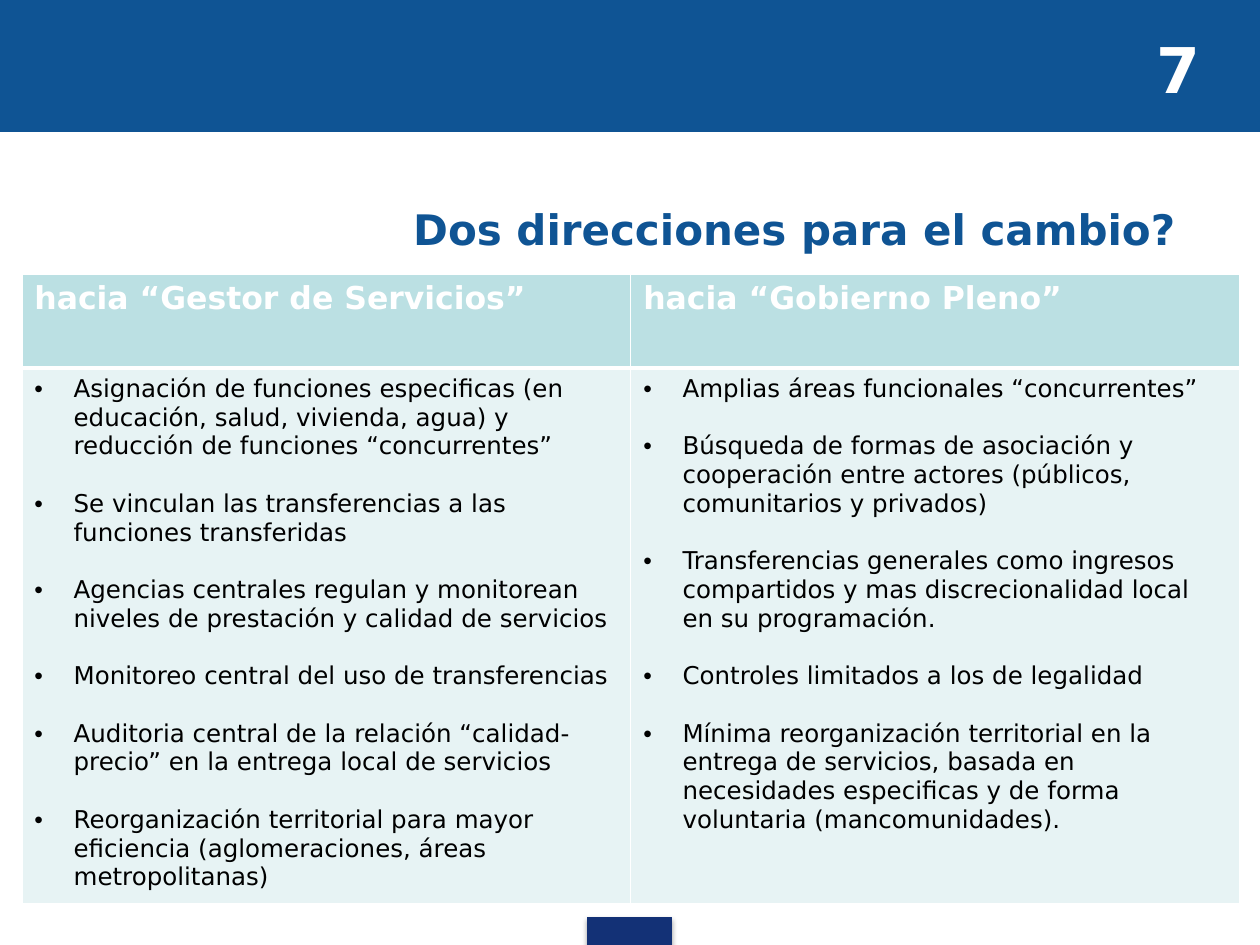
from dataclasses import dataclass

from lxml.etree import SubElement
from pptx import Presentation
from pptx.dml.color import RGBColor
from pptx.enum.shapes import MSO_SHAPE
from pptx.enum.text import MSO_ANCHOR, PP_ALIGN
from pptx.oxml.ns import qn
from pptx.util import Cm, Pt

FONT = "DejaVu Sans"
COLORS = {
    "band": "0F5494",
    "tab": "133176",
    "header": "BBE0E3",
    "body": "E7F3F4",
    "white": "FFFFFF",
    "black": "000000",
}
ITEM_GAP = Pt(16.4)
ITEM_INDENT = Cm(0.79)


@dataclass
class Direction:
    heading: str
    items: list[str]


@dataclass
class Bar:
    left: float
    top: float
    width: float
    height: float
    color: str
    shadow: bool = False


BARS = [
    Bar(0, 0, 25.4, 2.66, "band"),
    Bar(11.84, 18.49, 1.7, 0.56, "tab", shadow=True),
]

DIRECTIONS = [
    Direction("hacia “Gestor de Servicios”", [
        "Asignación de funciones especificas (en educación, salud, vivienda, agua) "
        "y reducción de funciones “concurrentes”",
        "Se vinculan las transferencias a las funciones transferidas",
        "Agencias centrales regulan y monitorean niveles de prestación y calidad de servicios",
        "Monitoreo central del uso de transferencias",
        "Auditoria central de la relación “calidad-precio” en la entrega local de servicios",
        "Reorganización territorial para mayor eficiencia (aglomeraciones, áreas metropolitanas)",
    ]),
    Direction("hacia “Gobierno Pleno”", [
        "Amplias áreas funcionales “concurrentes”",
        "Búsqueda de formas de asociación y cooperación entre actores "
        "(públicos, comunitarios y privados)",
        "Transferencias generales como ingresos compartidos y mas discrecionalidad local "
        "en su programación.",
        "Controles limitados a los de legalidad",
        "Mínima reorganización territorial en la entrega de servicios, basada en necesidades "
        "especificas y de forma voluntaria (mancomunidades).",
    ]),
]


def rgb(name: str) -> RGBColor:
    return RGBColor.from_string(COLORS[name])


def add_run(paragraph, text: str, size: float, color: str, bold: bool = False) -> None:
    run = paragraph.add_run()
    run.text = text
    run.font.name = FONT
    run.font.size = Pt(size)
    run.font.bold = bold
    run.font.color.rgb = rgb(color)


def add_bar(slide, bar: Bar) -> None:
    shape = slide.shapes.add_shape(
        MSO_SHAPE.RECTANGLE, Cm(bar.left), Cm(bar.top), Cm(bar.width), Cm(bar.height))
    shape.fill.solid()
    shape.fill.fore_color.rgb = rgb(bar.color)
    shape.line.color.rgb = rgb(bar.color)
    shape.line.width = Pt(0.75)
    shape.shadow.inherit = False
    if bar.shadow:
        effects = shape._element.spPr.find(qn("a:effectLst"))
        shadow = SubElement(effects, qn("a:outerShdw"), blurRad=str(Pt(3.1)),
                            dist=str(Pt(1.8)), dir="5400000", rotWithShape="0")
        color = SubElement(shadow, qn("a:srgbClr"), val=COLORS["black"])
        SubElement(color, qn("a:alpha"), val="35000")


def style_cell(cell, fill: str, bottom_width: float) -> None:
    """Fill the cell and give it white borders."""
    properties = cell._tc.get_or_add_tcPr()
    for side, width in {"L": 1, "R": 1, "T": 1, "B": bottom_width}.items():
        line = SubElement(properties, qn(f"a:ln{side}"), w=str(Pt(width)))
        solid = SubElement(line, qn("a:solidFill"))
        SubElement(solid, qn("a:srgbClr"), val=COLORS["white"])
    cell.fill.solid()
    cell.fill.fore_color.rgb = rgb(fill)


def add_bullet(paragraph) -> None:
    properties = paragraph._p.get_or_add_pPr()
    properties.set("marL", str(ITEM_INDENT))
    properties.set("indent", str(-ITEM_INDENT))
    SubElement(properties, qn("a:buFont"), typeface="Arial")
    SubElement(properties, qn("a:buChar"), char="•")


def write_items(text_frame, items: list[str]) -> None:
    for index, item in enumerate(items):
        paragraph = text_frame.add_paragraph() if index else text_frame.paragraphs[0]
        add_bullet(paragraph)
        if index:
            paragraph.space_before = ITEM_GAP
        add_run(paragraph, item, 14, "black")


def add_directions_table(slide, directions: list[Direction]) -> None:
    frame = slide.shapes.add_table(
        2, len(directions), Cm(0.44), Cm(5.52), Cm(24.55), Cm(12.7))
    table = frame.table
    table.rows[0].height = Cm(1.9)
    table.rows[1].height = Cm(10.8)
    for column, direction in enumerate(directions):
        header, body = table.cell(0, column), table.cell(1, column)
        style_cell(header, "header", 3)
        add_run(header.text_frame.paragraphs[0], direction.heading, 18, "white", bold=True)
        style_cell(body, "body", 1)
        write_items(body.text_frame, direction.items)


def write_title(slide, text: str) -> None:
    title = slide.shapes.title
    title.left, title.top, title.width, title.height = Cm(1.09), Cm(3.73), Cm(22.86), Cm(1.78)
    title.text_frame.vertical_anchor = MSO_ANCHOR.MIDDLE
    paragraph = title.text_frame.paragraphs[0]
    paragraph.alignment = PP_ALIGN.RIGHT
    add_run(paragraph, text, 24, "band", bold=True)


def add_slide_number(slide, number: str) -> None:
    box = slide.shapes.add_textbox(Cm(23.06), Cm(0.53), Cm(1.7), Cm(1.7))
    box.text_frame.word_wrap = True
    box.text_frame.vertical_anchor = MSO_ANCHOR.MIDDLE
    add_run(box.text_frame.paragraphs[0], number, 36, "white", bold=True)


def main() -> None:
    presentation = Presentation()
    presentation.slide_width, presentation.slide_height = Cm(25.4), Cm(19.05)
    slide = presentation.slides.add_slide(presentation.slide_layouts[5])
    for bar in BARS:
        add_bar(slide, bar)
    write_title(slide, "Dos direcciones para el cambio?")
    add_directions_table(slide, DIRECTIONS)
    add_slide_number(slide, "7")
    presentation.save("out.pptx")


if __name__ == "__main__":
    main()
